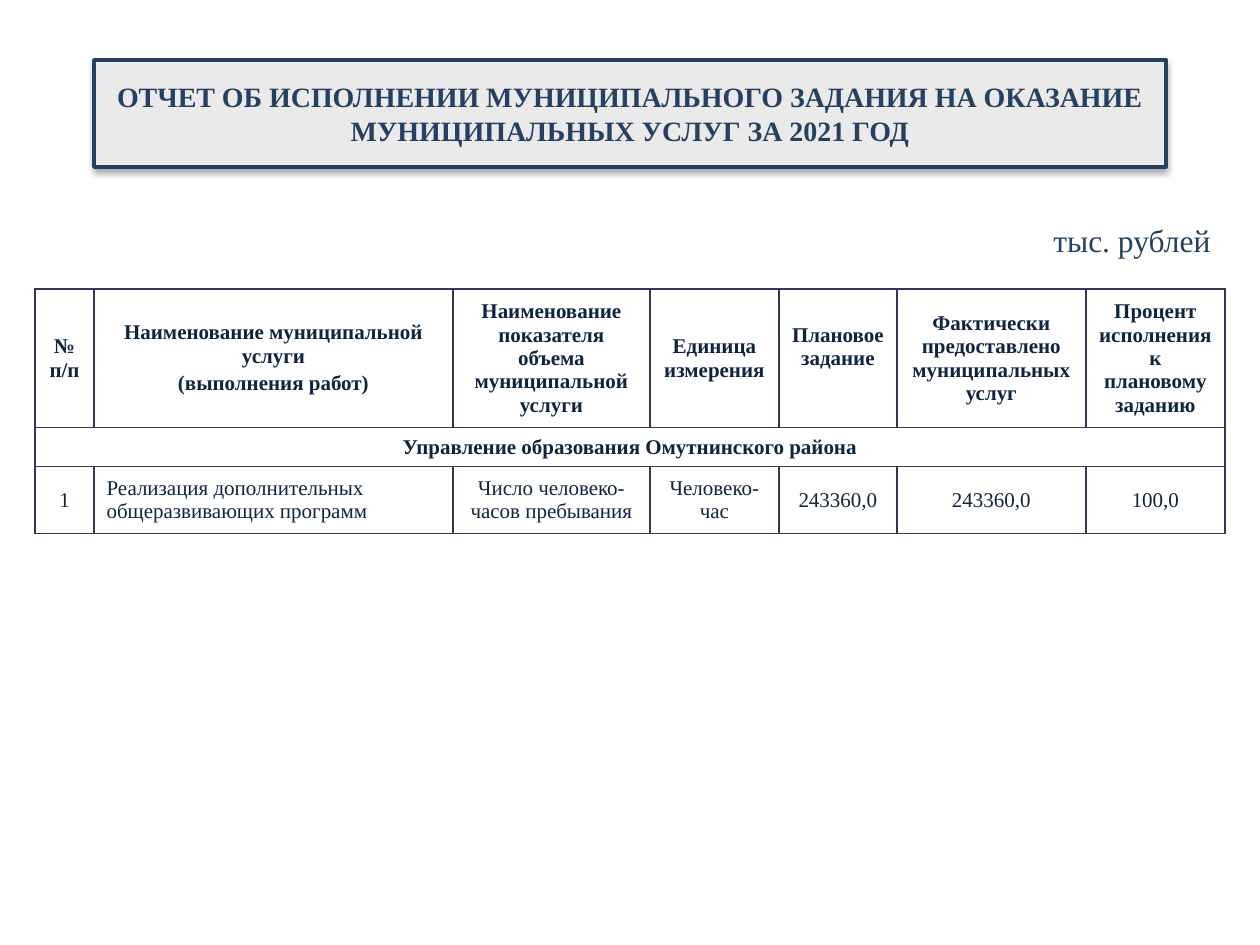
from lxml import etree
from pptx import Presentation, util as u
from pptx.dml.color import RGBColor
from pptx.enum import text as t
from pptx.oxml import parse_xml
from pptx.oxml.ns import nsdecls, qn

NAVY, INK, EDGE = "254061", "0F243E", "403152"
MID, LEFT = t.PP_ALIGN.CENTER, t.PP_ALIGN.LEFT

COLS = [59, 359, 197, 129, 118, 189, 139]
ROWS = [138, 39, 67]
HEAD = ["№ п/п", "Наименование муниципальной услуги\n(выполнения работ)",
        "Наименование показателя объема муниципальной услуги",
        "Единица измерения", "Плановое задание",
        "Фактически предоставлено муниципальных услуг",
        "Процент исполнения к плановому заданию"]
BAND = "Управление образования Омутнинского района"
DATA = ["1", "Реализация дополнительных общеразвивающих программ",
        "Число человеко-часов пребывания", "Человеко-час",
        "243360,0", "243360,0", "100,0"]


def px(n):
    return round(n * 914400 / 126)


def rgb(code):
    return RGBColor.from_string(code)


def put(obj, **vals):
    for key, val in vals.items():
        setattr(obj, key, val)


def place(shape, x, y, w, h):
    put(shape, left=px(x), top=px(y), width=px(w), height=px(h))


def write(frame, words, size, code, bold=False, align=LEFT):
    frame.word_wrap = True
    frame.text = words
    for i, par in enumerate(frame.paragraphs):
        par.alignment = align
        if i:
            par.space_before = u.Pt(size * 0.2)
        for run in par.runs:
            put(run.font, name="Times New Roman", size=u.Pt(size), bold=bold)
            run.font.color.rgb = rgb(code)


def paint(obj, code):
    obj.fill.solid()
    obj.fill.fore_color.rgb = rgb(code)


def banner(shape, words):
    place(shape, 94, 60, 1072, 107)
    props = shape._element.spPr
    props.append(parse_xml(
        f'<a:prstGeom {nsdecls("a")} prst="roundRect"><a:avLst/></a:prstGeom>'))
    paint(shape, "EAEAEA")
    shape.line.color.rgb = rgb(NAVY)
    shape.line.width = u.Pt(2)
    # Soft shadow straight below
    props.append(parse_xml(
        f'<a:effectLst {nsdecls("a")}><a:outerShdw blurRad="{u.Pt(3.5)}" '
        f'dist="{u.Pt(2.2)}" dir="5400000" rotWithShape="0">'
        '<a:srgbClr val="000000"><a:alpha val="32000"/></a:srgbClr>'
        '</a:outerShdw></a:effectLst>'))
    write(shape.text_frame, words, 16, NAVY, True, MID)
    put(shape.text_frame, auto_size=t.MSO_AUTO_SIZE.NONE,
        vertical_anchor=t.MSO_ANCHOR.MIDDLE)


def note(slide, words, *box):
    shape = slide.shapes.add_textbox(*map(px, box))
    write(shape.text_frame, words, 18, NAVY)


def frame(cell):
    props = cell._tc.get_or_add_tcPr()
    for side in "LRTB":
        line = etree.SubElement(props, qn("a:ln" + side), w=str(u.Pt(1)))
        fill = etree.SubElement(line, qn("a:solidFill"))
        etree.SubElement(fill, qn("a:srgbClr"), val=EDGE)


def report(slide, x, y):
    size = len(ROWS), len(COLS)
    grid = slide.shapes.add_table(
        *size, px(x), px(y), px(sum(COLS)), px(sum(ROWS))).table
    put(grid, first_row=False, horz_banding=False)
    for col, wide in zip(grid.columns, COLS):
        col.width = px(wide)
    for row, high in zip(grid.rows, ROWS):
        row.height = px(high)
    grid.cell(1, 0).merge(grid.cell(1, len(COLS) - 1))
    lines = [HEAD, [BAND] + [""] * (len(COLS) - 1), DATA]
    for r, line in enumerate(lines):
        for c, words in enumerate(line):
            cell = grid.cell(r, c)
            frame(cell)
            paint(cell, "FFFFFF")
            cell.vertical_anchor = t.MSO_ANCHOR.MIDDLE
            if words:
                side = LEFT if (r, c) == (2, 1) else MID
                write(cell.text_frame, words, 12, INK, r < 2, side)
    # The plan heading sits one line higher
    grid.cell(0, HEAD.index("Плановое задание")).margin_bottom = px(29)


def main():
    deck = Presentation()
    put(deck, slide_width=u.Inches(10), slide_height=u.Inches(7.5))
    slide = deck.slides.add_slide(deck.slide_layouts[5])
    banner(slide.shapes.title, "ОТЧЕТ ОБ ИСПОЛНЕНИИ МУНИЦИПАЛЬНОГО ЗАДАНИЯ "
           "НА ОКАЗАНИЕ МУНИЦИПАЛЬНЫХ УСЛУГ ЗА 2021 ГОД")
    note(slide, "тыс. рублей", 1041, 215, 219, 50)
    report(slide, 35, 289)
    deck.save("out.pptx")


if __name__ == "__main__":
    main()
